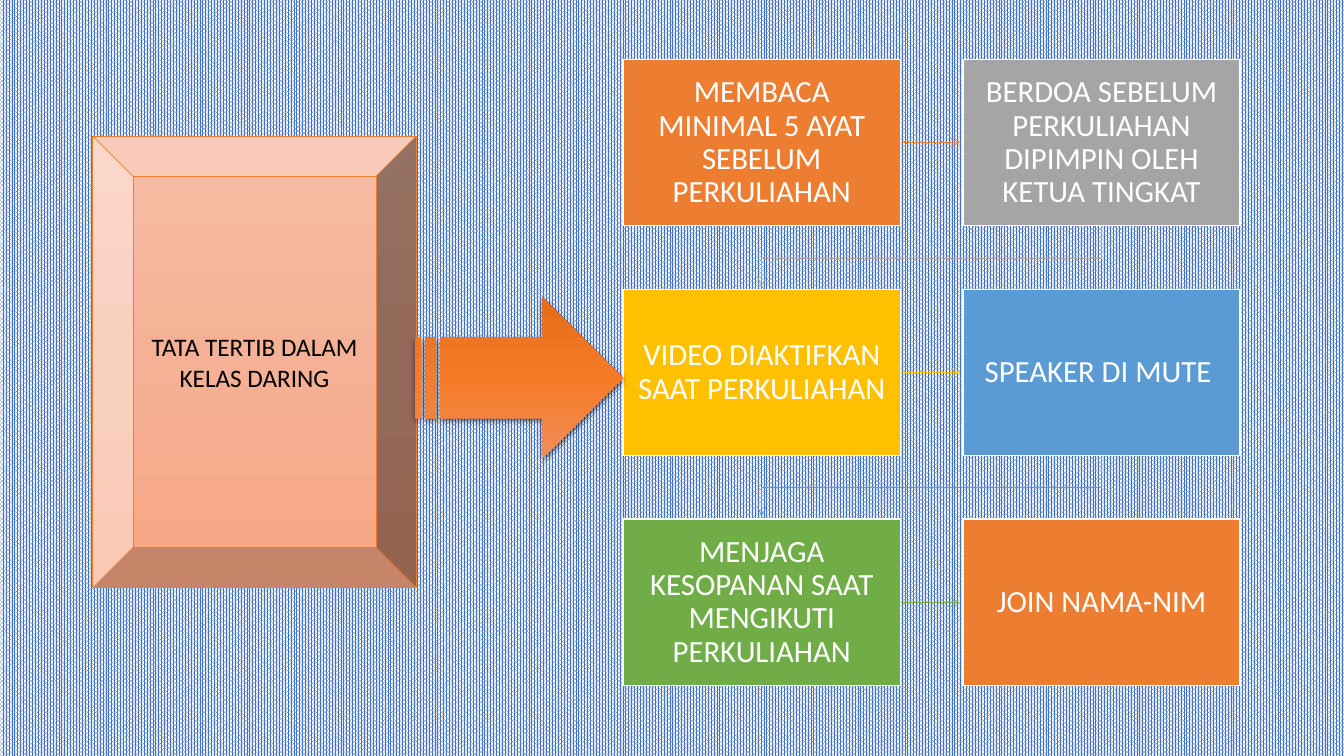
from copy import deepcopy
from dataclasses import dataclass

from pptx import Presentation
from pptx.dml.color import RGBColor
from pptx.enum.dml import MSO_PATTERN
from pptx.enum.shapes import MSO_CONNECTOR, MSO_SHAPE
from pptx.enum.text import MSO_ANCHOR, PP_ALIGN
from pptx.oxml import parse_xml
from pptx.oxml.ns import nsdecls, qn
from pptx.util import Inches, Pt

DOTS = MSO_PATTERN.PERCENT_80
STRAIGHT = MSO_CONNECTOR.STRAIGHT
RECTANGLE, BEVEL = MSO_SHAPE.RECTANGLE, MSO_SHAPE.BEVEL
STRIPED_ARROW = MSO_SHAPE.STRIPED_RIGHT_ARROW
MIDDLE, CENTER = MSO_ANCHOR.MIDDLE, PP_ALIGN.CENTER


@dataclass(frozen=True)
class Theme:
    font: str = "Calibri"
    rule_size: int = 22
    heading_size: int = 18
    thin: float = 0.5
    border: float = 1
    white: str = "FFFFFF"
    black: str = "000000"
    blue: str = "4472C4"
    orange: str = "ED7D31"
    gray: str = "A5A5A5"
    gold: str = "FFC000"
    sky: str = "5B9BD5"
    green: str = "70AD47"
    panel_stops: tuple = ("F7BDA5", "F5B196", "F8A582")
    arrow_stops: tuple = ("F18C57", "F67B28", "E56C19")


THEME = Theme()

RULES = [
    ("MEMBACA MINIMAL 5 AYAT SEBELUM PERKULIAHAN", THEME.orange),
    ("BERDOA SEBELUM PERKULIAHAN DIPIMPIN OLEH KETUA TINGKAT", THEME.gray),
    ("VIDEO DIAKTIFKAN SAAT PERKULIAHAN", THEME.gold),
    ("SPEAKER DI MUTE ", THEME.sky),
    ("MENJAGA KESOPANAN SAAT MENGIKUTI PERKULIAHAN", THEME.green),
    ("JOIN NAMA-NIM", THEME.orange),
]
COLUMNS = 2
GRID_LEFT, GRID_TOP = 6.18, 0.59
COLUMN_STEP, ROW_STEP = 3.37, 2.28
BOX_WIDTH, BOX_HEIGHT = 2.75, 1.65
ARROW_GAP = 0.03
ELBOW_DROP = 0.32


def color(code):
    return RGBColor.from_string(code)


def apply_format(target, values):
    for name, value in values.items():
        setattr(target, name, value)


def set_line(line, code, width):
    line.color.rgb = color(code)
    line.width = Pt(width)


def add_arrowhead(shape):
    line = shape.line._get_or_add_ln()
    line.append(parse_xml(f'<a:tailEnd {nsdecls("a")} type="arrow"/>'))


def set_gradient(shape, codes):
    """Fill from top to bottom with evenly spaced colours."""
    shape.fill.gradient()
    shape.fill.gradient_angle = 270
    stop_list = shape._element.spPr.find(qn("a:gradFill")).find(qn("a:gsLst"))
    while len(stop_list) < len(codes):
        stop_list.append(deepcopy(stop_list[0]))
    for index, (stop, code) in enumerate(zip(shape.fill.gradient_stops, codes)):
        stop.color.rgb = color(code)
        stop.position = index / (len(codes) - 1)


def add_shape(slide, kind, left, top, width, height):
    shape = slide.shapes.add_shape(
        kind, Inches(left), Inches(top), Inches(width), Inches(height))
    shape.shadow.inherit = False
    return shape


def write_text(shape, text, size, code, spacing=1.0):
    frame = shape.text_frame
    apply_format(frame, {"word_wrap": True, "vertical_anchor": MIDDLE})
    para = frame.paragraphs[0]
    apply_format(para, {"alignment": CENTER, "line_spacing": spacing})
    span = para.add_run()
    span.text = text
    apply_format(span.font, {"name": THEME.font, "size": Pt(size)})
    span.font.color.rgb = color(code)


def box_corner(index):
    row, column = divmod(index, COLUMNS)
    return GRID_LEFT + column * COLUMN_STEP, GRID_TOP + row * ROW_STEP


def add_rule_box(slide, index, text, code):
    box = add_shape(slide, RECTANGLE, *box_corner(index), BOX_WIDTH, BOX_HEIGHT)
    box.fill.solid()
    box.fill.fore_color.rgb = color(code)
    set_line(box.line, THEME.white, THEME.border)
    apply_format(box.text_frame, {
        "margin_left": Inches(0.13), "margin_right": Inches(0.13),
        "margin_top": Inches(0.14), "margin_bottom": Inches(0.14)})
    write_text(box, text, THEME.rule_size, THEME.white, spacing=0.9)


def add_row_arrow(slide, index, code):
    """Join a box to its right-hand neighbour."""
    left, top = box_corner(index)
    next_left, _ = box_corner(index + 1)
    middle = Inches(top + BOX_HEIGHT / 2)
    arrow = slide.shapes.add_connector(
        STRAIGHT, Inches(left + BOX_WIDTH), middle,
        Inches(next_left - ARROW_GAP), middle)
    set_line(arrow.line, code, THEME.thin)
    arrow._element.spPr.append(parse_xml(f'<a:effectLst {nsdecls("a")}/>'))
    add_arrowhead(arrow)


def add_wrap_arrow(slide, index, code):
    """Lead from the last box of a row to the first of the next row."""
    left, top = box_corner(index)
    next_left, next_top = box_corner(index + 1)
    start_x, end_x = left + BOX_WIDTH / 2, next_left + BOX_WIDTH / 2
    start_y = top + BOX_HEIGHT
    turn_y = start_y + ELBOW_DROP
    corners = [(start_x, turn_y), (end_x, turn_y), (end_x, next_top - ARROW_GAP)]
    builder = slide.shapes.build_freeform(Inches(start_x), Inches(start_y))
    builder.add_line_segments(
        [(Inches(x), Inches(y)) for x, y in corners], close=False)
    arrow = builder.convert_to_shape()
    arrow.shadow.inherit = False
    arrow.fill.background()
    set_line(arrow.line, code, THEME.thin)
    add_arrowhead(arrow)


def add_heading_panel(slide, text):
    panel = add_shape(slide, BEVEL, 0.92, 1.35, 3.21, 4.48)
    set_gradient(panel, THEME.panel_stops)
    set_line(panel.line, THEME.orange, THEME.thin)
    write_text(panel, text, THEME.heading_size, THEME.black)


def add_block_arrow(slide):
    arrow = add_shape(slide, STRIPED_ARROW, 4.12, 2.95, 2.06, 1.6)
    set_gradient(arrow, THEME.arrow_stops)
    arrow.line.fill.background()
    properties = arrow._element.spPr
    properties.find(qn("a:xfrm")).set("flipV", "1")
    properties.find(qn("a:effectLst")).append(parse_xml(
        f'<a:outerShdw {nsdecls("a")} blurRad="{Pt(4.5)}" dist="{Pt(1.5)}" '
        f'dir="5400000" algn="ctr" rotWithShape="0"><a:srgbClr val="{THEME.black}">'
        '<a:alpha val="63000"/></a:srgbClr></a:outerShdw>'))


def main():
    deck = Presentation()
    apply_format(deck, {"slide_width": Inches(13.33), "slide_height": Inches(7.5)})
    slide = deck.slides.add_slide(deck.slide_layouts[6])
    backdrop = slide.background.fill
    backdrop.patterned()
    backdrop.pattern = DOTS
    backdrop.fore_color.rgb = color(THEME.blue)
    backdrop.back_color.rgb = color(THEME.white)

    for index, (text, code) in enumerate(RULES):
        if index < len(RULES) - 1:
            ends_row = index % COLUMNS == COLUMNS - 1
            add_arrow = add_wrap_arrow if ends_row else add_row_arrow
            add_arrow(slide, index, code)
        add_rule_box(slide, index, text, code)
    add_heading_panel(slide, "TATA TERTIB DALAM KELAS DARING")
    add_block_arrow(slide)
    deck.save("out.pptx")


if __name__ == "__main__":
    main()
